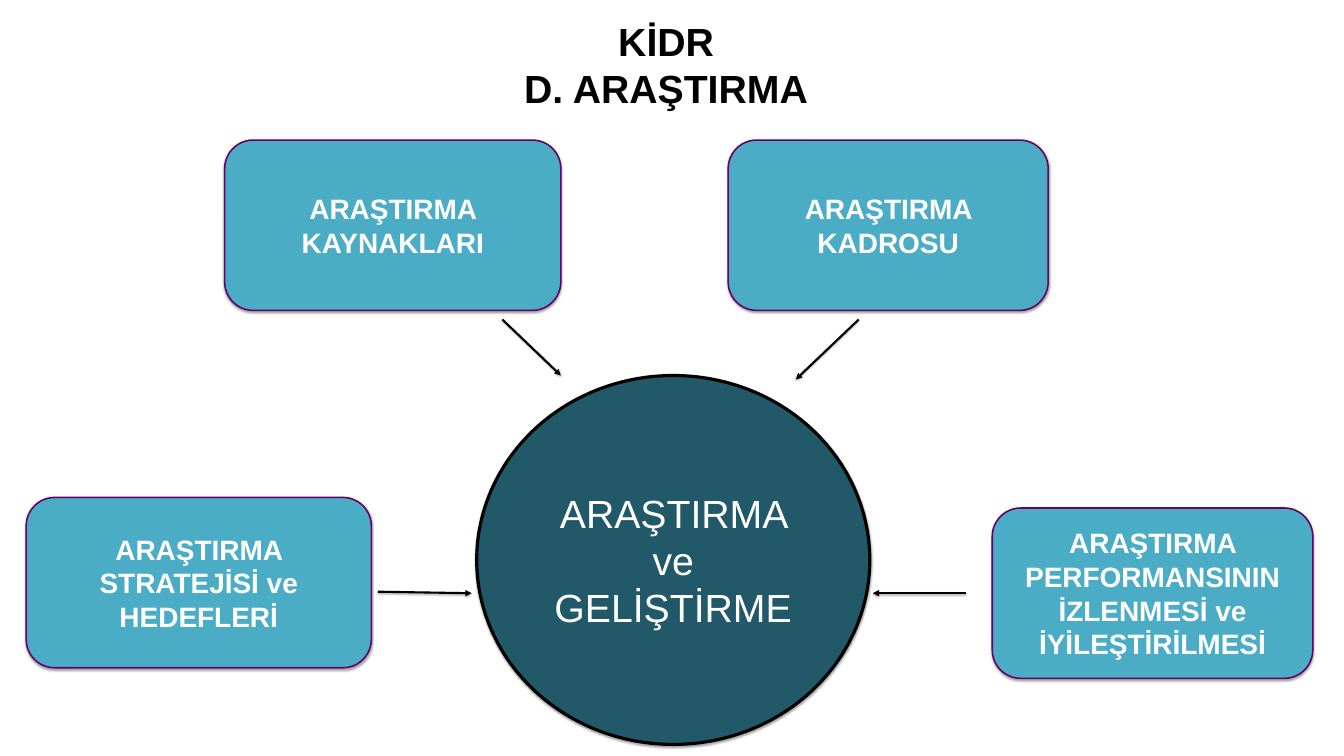
"""Build the KİDR research slide: four boxes pointing to a central ellipse."""
from pptx import Presentation
from pptx.dml.color import RGBColor
from pptx.enum.shapes import MSO_CONNECTOR, MSO_SHAPE
from pptx.enum.text import MSO_ANCHOR, PP_ALIGN
from pptx.oxml import parse_xml
from pptx.oxml.ns import nsdecls
from pptx.util import Inches, Pt

COLORS = {"box": "4BACC6", "border": "660066", "hub": "215968", "ink": "000000", "light": "FFFFFF"}
SHADOW = (
    f'<a:effectLst {nsdecls("a")}><a:outerShdw blurRad="40000" dist="23000" dir="5400000" '
    f'rotWithShape="0"><a:srgbClr val="{COLORS["ink"]}"><a:alpha val="35000"/></a:srgbClr>'
    '</a:outerShdw></a:effectLst>'
)
ARROWHEAD = f'<a:tailEnd {nsdecls("a")} type="triangle"/>'


def set_line(shape, color, width):
    shape.line.color.rgb = RGBColor.from_string(COLORS[color])
    shape.line.width = Pt(width)
    shape._element.spPr.append(parse_xml(SHADOW))


def set_text(tf, lines, size, color, bold, anchor):
    tf.word_wrap = True
    tf.vertical_anchor = anchor
    tf.margin_left = tf.margin_right = Inches(0.2)
    tf.margin_top = tf.margin_bottom = Inches(0.1)
    for i, line in enumerate(lines):
        p = tf.paragraphs[0] if i == 0 else tf.add_paragraph()
        p.text = line
        p.alignment = PP_ALIGN.CENTER
        p.font.name = "Arial"
        p.font.size = Pt(size)
        p.font.bold = bold
        p.font.color.rgb = RGBColor.from_string(COLORS[color])


prs = Presentation()
prs.slide_width, prs.slide_height = Inches(26.67), Inches(15)
col, row = prs.slide_width / 100, prs.slide_height / 100
s = prs.slides.add_slide(prs.slide_layouts[5])

title = s.shapes.title
title.left, title.top = int(10.42 * col), int(1.67 * row)
title.width, title.height = int(78.29 * col), int(13.93 * row)
set_text(title.text_frame, ["KİDR", "D. ARAŞTIRMA"], 56, "ink", True, MSO_ANCHOR.TOP)

box = (MSO_SHAPE.ROUNDED_RECTANGLE, "box", "border", 2.25, 40, True)
hub = (MSO_SHAPE.OVAL, "hub", "ink", 4.5, 56, False)
box_h = 22.53
nodes = [
    ("ARAŞTIRMA KAYNAKLARI", 16.72, 18.53, 25.01, box_h, box),
    ("ARAŞTIRMA KADROSU", 54.18, 18.53, 23.81, box_h, box),
    ("ARAŞTIRMA STRATEJİSİ ve HEDEFLERİ", 1.95, 65.8, 25.68, box_h, box),
    ("ARAŞTIRMA PERFORMANSININ İZLENMESİ ve İYİLEŞTİRİLMESİ", 73.83, 67.2, 23.85, box_h, box),
    ("ARAŞTIRMA ve GELİŞTİRME", 35.47, 49.67, 29.25, 48.8, hub),
]
for text, x, y, w, h, (kind, fill, border, width, size, bold) in nodes:
    sp = s.shapes.add_shape(kind, int(x * col), int(y * row), int(w * col), int(h * row))
    sp.fill.solid()
    sp.fill.fore_color.rgb = RGBColor.from_string(COLORS[fill])
    set_line(sp, border, width)
    set_text(sp.text_frame, [text], size, "light", bold, MSO_ANCHOR.MIDDLE)

arrows = [
    (63.89, 42.27, 59.21, 50.2),
    (37.38, 42.27, 41.73, 49.67),
    (28.12, 78.27, 35.1, 78.47),
    (71.88, 78.47, 64.94, 78.47),
]
for x1, y1, x2, y2 in arrows:
    arrow = s.shapes.add_connector(
        MSO_CONNECTOR.STRAIGHT, int(x1 * col), int(y1 * row), int(x2 * col), int(y2 * row))
    set_line(arrow, "ink", 3)
    arrow.line._get_or_add_ln().append(parse_xml(ARROWHEAD))

prs.save("out.pptx")
